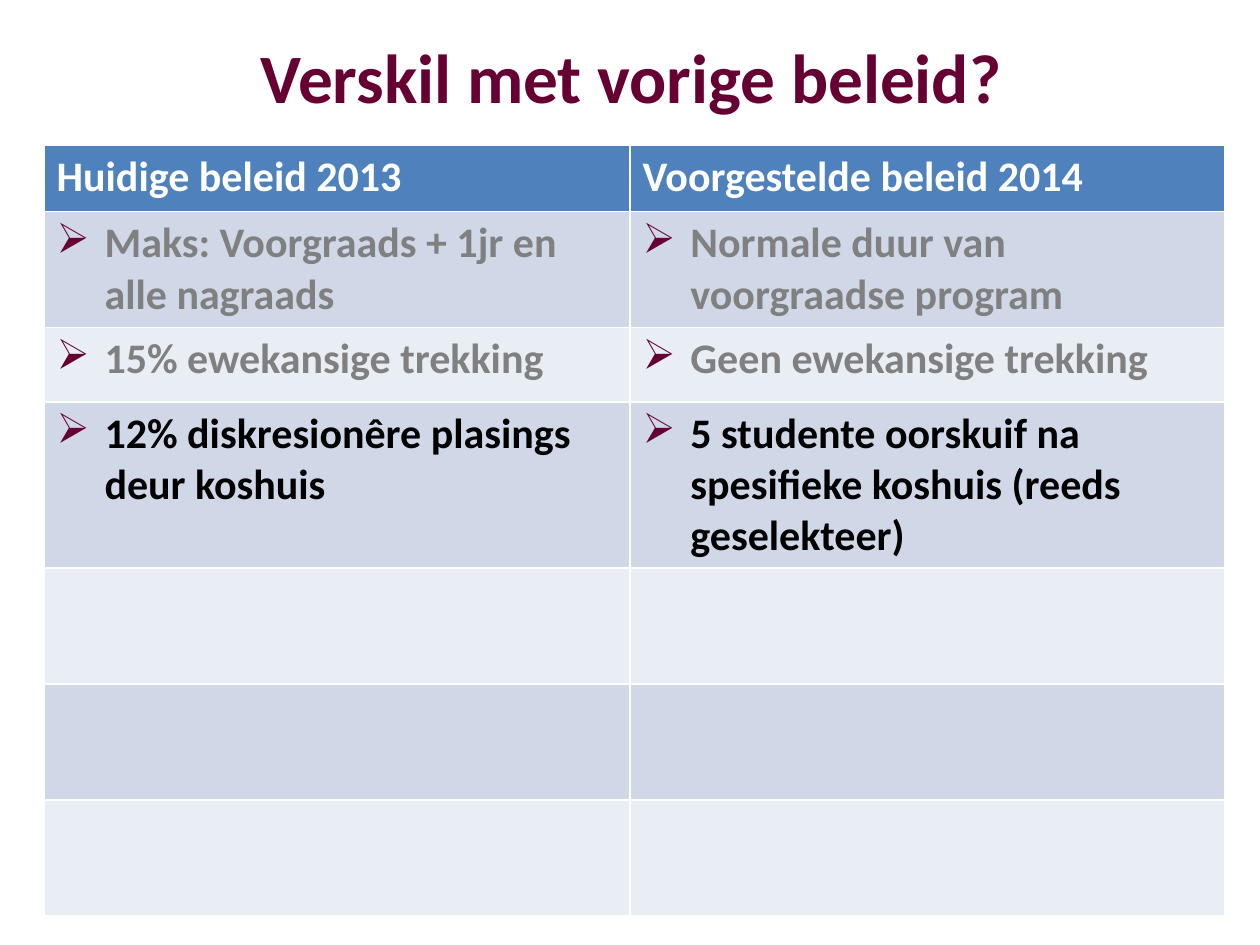
from lxml import etree
from pptx import Presentation
from pptx import util as u
from pptx.dml.color import RGBColor
from pptx.enum import text
from pptx.oxml import ns

PLUM = RGBColor(0x66, 0x00, 0x33)
BLUE = RGBColor(0x4F, 0x81, 0xBD)
BANDS = (RGBColor(0xD0, 0xD8, 0xE8), RGBColor(0xE9, 0xED, 0xF4))
WHITE = RGBColor(0xFF, 0xFF, 0xFF)
GREY = RGBColor(0x80, 0x80, 0x80)
BLACK = RGBColor(0x00, 0x00, 0x00)

HEADINGS = ("Huidige beleid 2013", "Voorgestelde beleid 2014")
POLICIES = (
    (GREY, "Maks: Voorgraads + 1jr en alle nagraads",
     "Normale duur van voorgraadse program"),
    (GREY, "15% ewekansige trekking", "Geen ewekansige trekking"),
    (BLACK, "12% diskresionêre plasings deur koshuis",
     "5 studente oorskuif na spesifieke koshuis (reeds geselekteer)"),
)
COLUMN_WIDTHS = (4.65, 4.72)
ROW_HEIGHTS = (0.53, 0.92, 0.59) + (0.92,) * 4


def write(frame, words, *, color, size=24, align=None, bullet=None):
    """Write one bold paragraph in a text frame, with an optional bullet."""
    para = frame.paragraphs[0]
    if align is not None:
        para.alignment = align
    span = para.add_run()
    span.text = words
    span.font.name = "Calibri"
    span.font.size = u.Pt(size)
    span.font.bold = True
    span.font.color.rgb = color
    if bullet:
        props = para._p.get_or_add_pPr()
        indent = u.Inches(0.38)
        props.set("marL", str(indent))
        props.set("indent", str(-indent))
        tint = etree.SubElement(props, ns.qn("a:buClr"))
        etree.SubElement(tint, ns.qn("a:srgbClr"), val=str(PLUM))
        etree.SubElement(props, ns.qn("a:buChar"), char=bullet)


class PolicyDeck:
    """Holds the deck and its current page."""

    def __init__(self):
        self.deck = Presentation()
        self.deck.slide_width = u.Inches(10)
        self.deck.slide_height = u.Inches(7.5)
        self.page = self.deck.slides.add_slide(self.deck.slide_layouts[5])

    def title(self, words):
        box = self.page.shapes.title
        box.left, box.top = u.Inches(0.51), u.Inches(0.21)
        box.width, box.height = u.Inches(9), u.Inches(0.79)
        frame = box.text_frame
        frame.auto_size = text.MSO_AUTO_SIZE.NONE
        frame.vertical_anchor = text.MSO_ANCHOR.MIDDLE
        write(frame, words, color=PLUM, size=39.6, align=text.PP_ALIGN.CENTER)

    def table(self, headings, policies):
        table = self.page.shapes.add_table(
            len(ROW_HEIGHTS), len(COLUMN_WIDTHS), u.Inches(0.35), u.Inches(1.15),
            u.Inches(sum(COLUMN_WIDTHS)), u.Inches(sum(ROW_HEIGHTS))).table
        for column, width in zip(table.columns, COLUMN_WIDTHS):
            column.width = u.Inches(width)
        for index, (row, height) in enumerate(zip(table.rows, ROW_HEIGHTS)):
            row.height = u.Inches(height)
            for cell in row.cells:
                cell.fill.solid()
                cell.fill.fore_color.rgb = BANDS[(index - 1) % 2] if index else BLUE
        for cell, words in zip(table.rows[0].cells, headings):
            write(cell.text_frame, words, color=WHITE)
        for index, (color, *entries) in enumerate(policies, start=1):
            for cell, words in zip(table.rows[index].cells, entries):
                write(cell.text_frame, words, color=color, bullet="➢")


def main():
    """Build and save the policy comparison."""
    policy = PolicyDeck()
    policy.title("Verskil met vorige beleid?")
    policy.table(HEADINGS, POLICIES)
    policy.deck.save("out.pptx")


if __name__ == "__main__":
    main()
